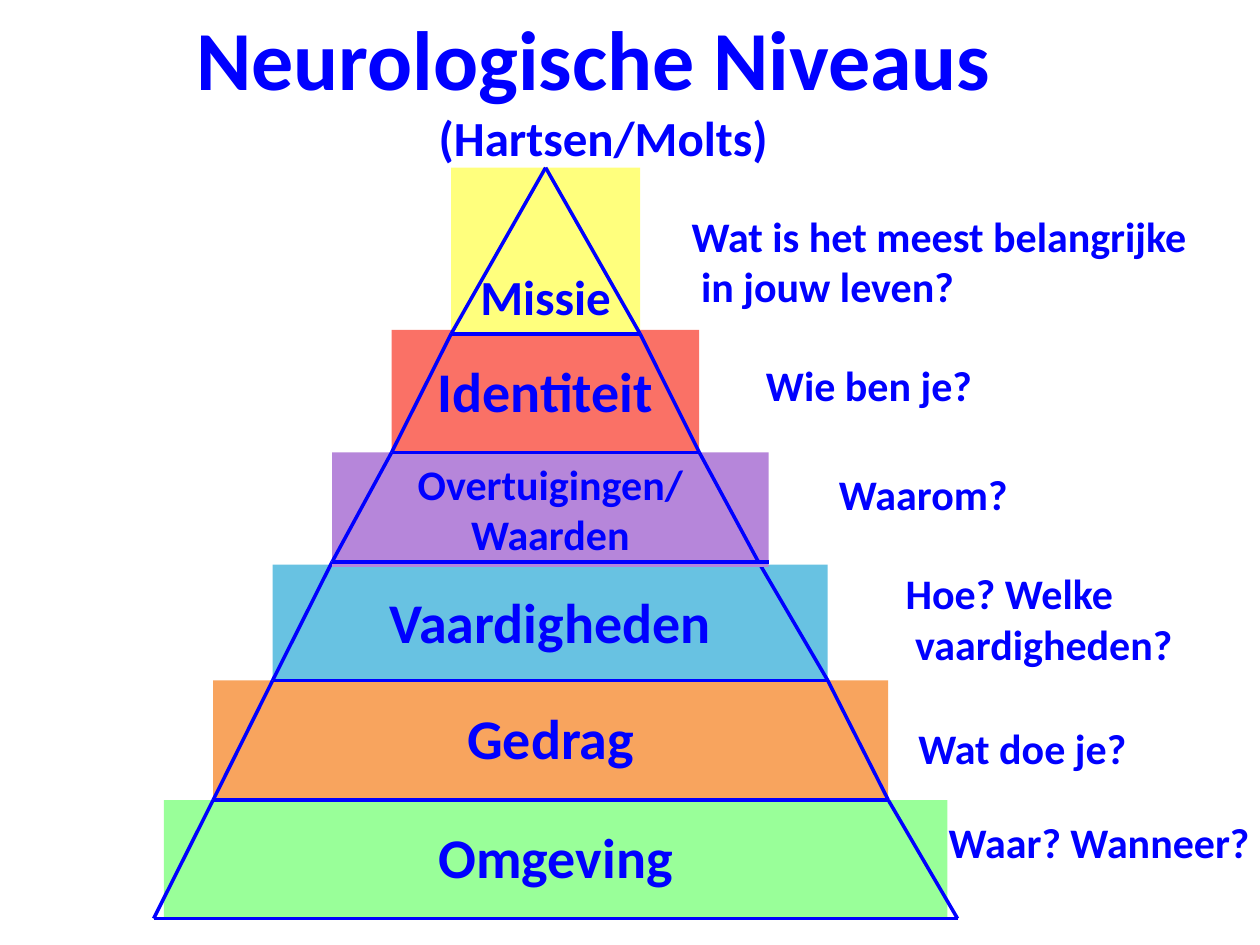
from collections import namedtuple

from lxml import etree
from pptx import Presentation
from pptx.dml.color import RGBColor
from pptx.enum.shapes import MSO_CONNECTOR, MSO_SHAPE
from pptx.enum.text import MSO_ANCHOR, PP_ALIGN
from pptx.oxml.ns import qn
from pptx.util import Pt

STRAIGHT = MSO_CONNECTOR.STRAIGHT
RECTANGLE = MSO_SHAPE.RECTANGLE
TOP = MSO_ANCHOR.TOP
LEFT, CENTER = PP_ALIGN.LEFT, PP_ALIGN.CENTER
TOP_SIDE = 0

FONT = "Calibri"
COLORS = {
    "ink": "0000FF",
    "mission": "FFFF7D",
    "identity": "FA7166",
    "beliefs": "B686DA",
    "skills": "68C2E2",
    "behaviour": "F8A45E",
    "environment": "99FF99",
}

LEFT_STEP = 34
APEX = 224

Box = namedtuple("Box", "left top width height")
Edge = namedtuple("Edge", "left right y")
Tier = namedtuple("Tier", "lines color size inset right bottom rise drop trim overhang",
                  defaults=(0, 0, 0, 0))

TIERS = [
    Tier(["Missie"], "mission", 28, 56.5, 278, 95),
    Tier(["Identiteit"], "identity", 32, 15, 311.8, 162.7, rise=2.2),
    Tier(["Overtuigingen/", "Waarden"], "beliefs", 24, 3.6, 345.6, 225.3,
         drop=2.9, overhang=5.8),
    Tier(["Vaardigheden"], "skills", 32, 13, 385.2, 293, rise=-1.5),
    Tier(["Gedrag"], "behaviour", 32, 13, 419.8, 361.4),
    Tier(["Omgeving"], "environment", 32, 13, 459.4, 429.1, trim=5.8, overhang=-5.8),
]
QUESTIONS = [
    (["Wat is het meest belangrijke", " in jouw leven?"], 0, 0, 306),
    (["Wie ben je?"], 42.5, 85.2, 133.2),
    (["Waarom?"], 84.2, 147.6, 117.4),
    (["Hoe? Welke", " vaardigheden?"], 122.4, 204.2, 168.5),
    (["Wat doe je?"], 129.6, 292.6, 134.6),
    (["Waar? Wanneer?"], 146.9, 346.4, 187.9),
]


def color(name):
    return RGBColor.from_string(COLORS[name])


def write_lines(shape, lines, wrap):
    frame = shape.text_frame
    frame.word_wrap = wrap
    frame.vertical_anchor = TOP
    for index, (text, size, alignment) in enumerate(lines):
        paragraph = frame.add_paragraph() if index else frame.paragraphs[0]
        paragraph.alignment = alignment
        run = paragraph.add_run()
        run.text = text
        run.font.name = FONT
        run.font.size = Pt(size)
        run.font.bold = True
        run.font.color.rgb = color("ink")


def add_line(slide, start, end):
    line = slide.shapes.add_connector(STRAIGHT, *map(Pt, start + end))
    line.line.color.rgb = color("ink")
    line.line.width = Pt(2)
    etree.SubElement(line._element.spPr, qn("a:effectLst"))
    return line


def add_title(slide, box):
    title = slide.shapes.add_textbox(*map(Pt, box))
    write_lines(title, [("Neurologische Niveaus", 48, LEFT),
                        (" (Hartsen/Molts)", 28, CENTER)], True)


def add_tier(slide, tier, upper, lower):
    bar_left = lower.left + tier.trim
    bar_right = lower.right + tier.overhang
    bar_top = upper.y - tier.rise
    bar = slide.shapes.add_shape(
        RECTANGLE, Pt(bar_left), Pt(bar_top), Pt(bar_right - bar_left),
        Pt(lower.y + tier.drop - bar_top))
    bar.shadow.inherit = False
    bar.fill.solid()
    bar.fill.fore_color.rgb = color(tier.color)
    bar.line.fill.background()
    write_lines(bar, [(text, tier.size, CENTER) for text in tier.lines], True)
    bar.text_frame.margin_top = Pt(tier.inset)

    for upper_x, lower_x in ((upper.left, lower.left), (upper.right, lower.right)):
        side = add_line(slide, (upper_x, upper.y), (lower_x, lower.y))
        if upper.left == upper.right:
            side.begin_connect(bar, TOP_SIDE)
    add_line(slide, (max(bar_right, lower.right), lower.y), (lower.left, lower.y))


def add_pyramid(slide, box):
    edges = [Edge(box.left + APEX, box.left + APEX, box.top)]
    for steps, tier in zip(reversed(range(len(TIERS))), TIERS):
        edges.append(Edge(box.left + steps * LEFT_STEP, box.left + tier.right,
                          box.top + tier.bottom))
    for tier, upper, lower in reversed(list(zip(TIERS, edges, edges[1:]))):
        add_tier(slide, tier, upper, lower)


def add_questions(slide, box):
    for lines, left, top, width in QUESTIONS:
        height = 7.2 + 29.3 * len(lines)
        question = slide.shapes.add_textbox(
            Pt(box.left + left), Pt(box.top + top), Pt(width), Pt(height))
        write_lines(question, [(text, 24, LEFT) for text in lines], False)


def main():
    presentation = Presentation()
    presentation.slide_width = Pt(720)
    presentation.slide_height = Pt(540)
    slide = presentation.slides.add_slide(presentation.slide_layouts[6])
    add_title(slide, Box(105, 0, 473, 99.4))
    add_pyramid(slide, Box(87.8, 95.8, 459.4, 429.1))
    add_questions(slide, Box(388.1, 116.6, 334.8, 382.9))
    presentation.save("out.pptx")


if __name__ == "__main__":
    main()
